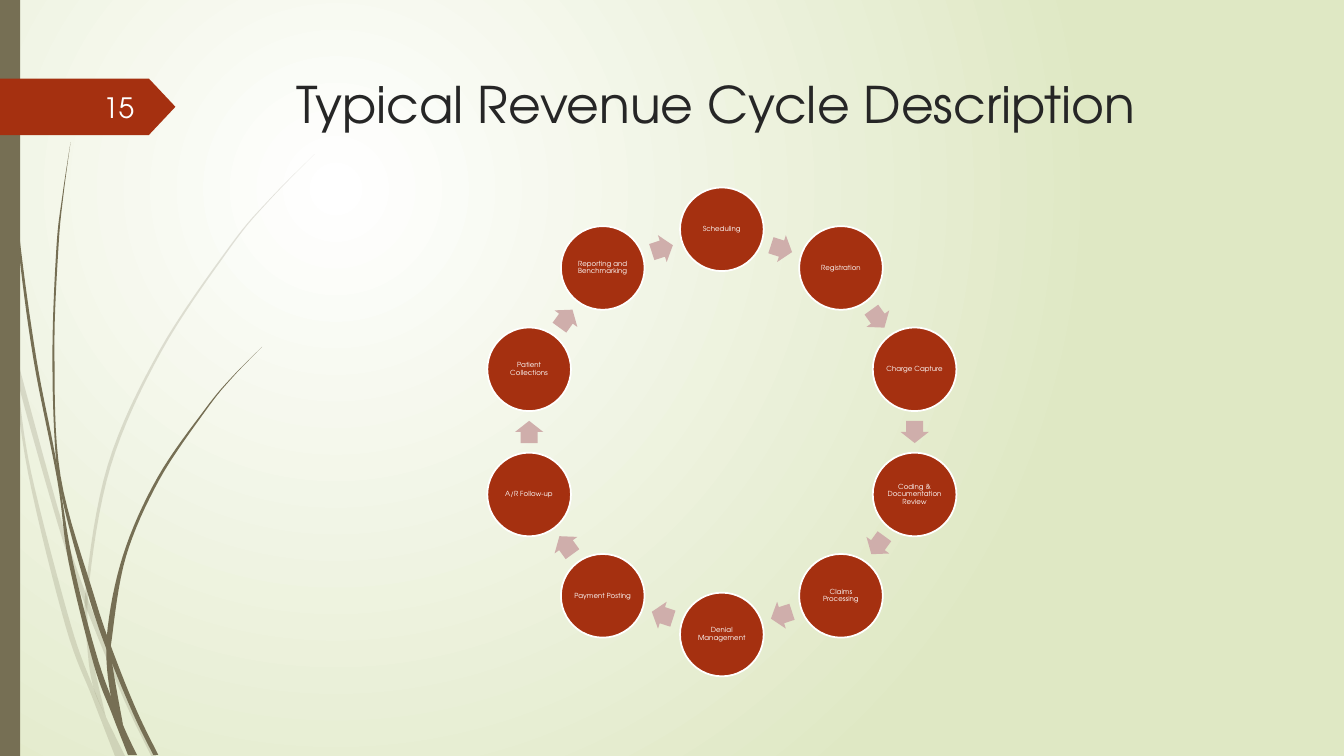
import math
import pptx
import pptx.util
import pptx.dml.color
import pptx.enum.shapes
import pptx.enum.text
import pptx.oxml
import pptx.oxml.ns

COLS, ROWS = 1333, 750
CELL = pptx.util.Inches(0.01)
FONT = "TeX Gyre Adventor"
SHAPE = pptx.enum.shapes.MSO_SHAPE
ALIGN = pptx.enum.text.PP_ALIGN
ANCHOR = pptx.enum.text.MSO_ANCHOR

COLORS = {
    "white": "FFFFFF",
    "lime": "DFE8C4",
    "olive": "766F54",
    "rust": "A53010",
    "rose": "CFAEAB",
    "ink": "262626",
    "page": "FEFFFF",
}

STEPS = [
    "Scheduling", "Registration", "Charge Capture",
    "Coding & Documentation Review", "Claims Processing",
    "Denial Management", "Payment Posting", "A/R Follow-up",
    "Patient Collections", "Reporting and Benchmarking",
]

PALE = [
    ([(0, 299), (10, 344), (28, 470), (65, 621), (92, 693), (114, 750)],
     [(124, 750), (105, 711), (93, 683), (70, 619), (31, 469), (17, 376),
      (9, 322), (0, 282)]),
    ([(14, 345), (17, 376), (58, 522), (84, 599), (123, 694), (150, 750)],
     [(155, 750), (127, 692), (92, 607), (62, 520), (14, 345)]),
    ([(312, 153), (268, 197), (228, 244), (158, 348), (107, 461), (85, 584),
      (87, 646), (93, 683), (105, 711)],
     [(105, 711), (91, 646), (88, 584), (110, 462), (160, 349), (229, 245),
      (268, 198), (312, 153)]),
]

DARK = [
    ([(3, 0), (7, 110), (17, 233), (33, 355), (57, 477), (68, 557),
      (93, 659), (111, 708), (127, 749)],
     [(136, 749), (122, 719), (98, 657), (72, 556), (55, 453), (36, 355),
      (19, 232), (8, 109), (4, 0)]),
    ([(70, 141), (62, 193), (56, 245), (52, 349), (55, 449), (64, 505),
      (88, 592), (106, 645), (132, 708), (152, 749)],
     [(157, 749), (136, 706), (113, 649), (93, 590), (60, 472), (54, 349),
      (58, 245), (63, 193), (70, 141)]),
    ([(260, 344), (231, 373), (204, 405), (156, 474), (122, 551), (106, 631),
      (110, 691), (122, 719)],
     [(122, 719), (111, 656), (111, 633), (125, 552), (158, 476), (205, 406),
      (231, 374), (260, 344)]),
]


def tint(name):
    """Return the named colour."""
    return pptx.dml.color.RGBColor.from_string(COLORS[name])


def place(item, x, y, w, h):
    """Move an item to a box of grid columns and rows."""
    item.left, item.top = round(x * CELL), round(y * CELL)
    item.width, item.height = round(w * CELL), round(h * CELL)


def write(item, text, size, color, align=ALIGN.LEFT, anchor=ANCHOR.TOP,
          inset=(10, 5), line=None):
    """Put formatted text in an item."""
    frame = item.text_frame
    frame.text = text
    frame.word_wrap = True
    frame.auto_size = pptx.enum.text.MSO_AUTO_SIZE.NONE
    frame.vertical_anchor = anchor
    frame.margin_left = frame.margin_right = inset[0] * CELL
    frame.margin_top = frame.margin_bottom = inset[1] * CELL
    para = frame.paragraphs[0]
    para.alignment = align
    para.line_spacing = line
    font = para.runs[0].font
    font.name, font.size = FONT, pptx.util.Pt(size)
    font.color.rgb = tint(color)


def paint(item, color, edge=None, alpha=None):
    """Fill an item, with an optional edge and opacity in percent."""
    item.shadow.inherit = False
    item.fill.solid()
    item.fill.fore_color.rgb = tint(color)
    if edge:
        item.line.color.rgb = tint(edge)
        item.line.width = pptx.util.Pt(1.25)
    else:
        item.line.fill.background()
    if alpha:
        fill = item.element.spPr.find(pptx.oxml.ns.qn("a:solidFill"))
        mark = pptx.oxml.parse_xml(
            f'<a:alpha {pptx.oxml.ns.nsdecls("a")} val="{alpha * 1000}"/>')
        fill[0].append(mark)


def add(slide, kind, box, color, edge=None):
    """Add a preset shape."""
    item = slide.shapes.add_shape(kind, 0, 0, 0, 0)
    place(item, *box)
    paint(item, color, edge)
    return item


def curve(knots, parts=8):
    """Return points of a smooth line through the knots."""
    ends = [knots[0], *knots, knots[-1]]
    points = [knots[0]]
    for a, b, c, d in zip(ends, ends[1:], ends[2:], ends[3:]):
        for n in range(1, parts + 1):
            t = n / parts
            points.append(tuple(
                q + t * (r - p) / 2
                + t ** 2 * (2 * p - 5 * q + 4 * r - s) / 2
                + t ** 3 * (3 * q - p - 3 * r + s) / 2
                for p, q, r, s in zip(a, b, c, d)))
    return points


def blade(slide, down, back, alpha=None):
    """Draw a blade of grass between two smooth edges."""
    points = [(x * CELL, y * CELL) for x, y in curve(down) + curve(back)]
    form = slide.shapes.build_freeform(*points[0])
    form.add_line_segments(points[1:])
    paint(form.convert_to_shape(), "olive", alpha=alpha)


def glow(slide):
    """Give the slide a round gradient."""
    fill = slide.background.fill
    fill.gradient()
    for stop, name in zip(fill.gradient_stops, ("white", "lime")):
        stop.color.rgb = tint(name)
    grad = slide.element.find(".//" + pptx.oxml.ns.qn("a:gradFill"))
    grad.remove(grad.find(pptx.oxml.ns.qn("a:lin")))
    grad.append(pptx.oxml.parse_xml(
        f'<a:path {pptx.oxml.ns.nsdecls("a")} path="circle"><a:fillToRect '
        'l="50000" t="50000" r="100000" b="100000"/></a:path>'))


def spot(turn, reach, w, h):
    """Return the box centred on the ring at an angle in degrees."""
    angle = math.radians(turn)
    x, y = 716 + reach * math.sin(angle), 428.5 - reach * math.cos(angle)
    return x - w / 2, y - h / 2, w, h


def ring(slide, steps, reach=201):
    """Draw the steps in a circle, with an arrow after each."""
    gap = 360 / len(steps)
    for n, step in enumerate(steps):
        disc = add(slide, SHAPE.OVAL, spot(n * gap, reach, 83, 83),
                   "rust", "white")
        write(disc, step, 5, "white", align=ALIGN.CENTER,
              anchor=ANCHOR.MIDDLE, inset=(1, 1), line=0.9)
        turn = (n + 0.5) * gap
        mid = reach * math.cos(math.radians(gap / 2))
        arrow = add(slide, SHAPE.RIGHT_ARROW, spot(turn, mid, 22, 28), "rose")
        arrow.adjustments[0], arrow.adjustments[1] = 0.6, 0.5
        arrow.rotation = turn


def main():
    """Build the slide and save it."""
    deck = pptx.Presentation()
    deck.slide_width, deck.slide_height = COLS * CELL, ROWS * CELL
    slide = deck.slides.add_slide(deck.slide_layouts[5])
    glow(slide)
    for down, back in PALE:
        blade(slide, down, back, alpha=20)
    for down, back in DARK:
        blade(slide, down, back)
    add(slide, SHAPE.RECTANGLE, (0, 0, 20, ROWS), "olive")
    flag = add(slide, SHAPE.PENTAGON, (0, 78, 174, 56), "rust")
    flag.adjustments[0] = 0.47
    title = slide.shapes.title
    place(title, 284, 68, 975, 92)
    write(title, "Typical Revenue Cycle Description", 36, "ink")
    page = slide.shapes.add_textbox(0, 0, 0, 0)
    place(page, 58, 86, 85, 40)
    write(page, "15", 20, "page", align=ALIGN.RIGHT, anchor=ANCHOR.MIDDLE)
    ring(slide, STEPS)
    deck.save("out.pptx")


if __name__ == "__main__":
    main()
